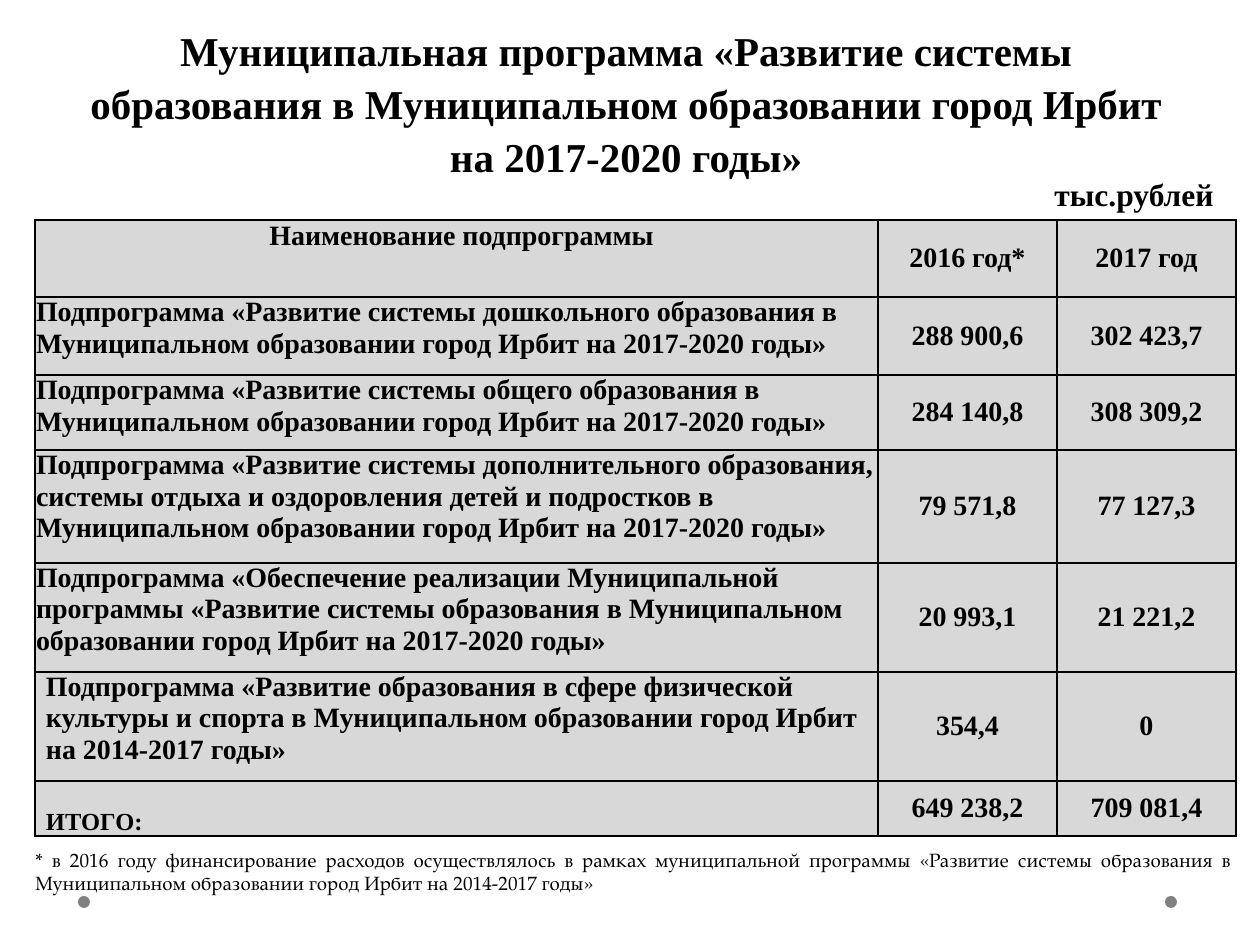
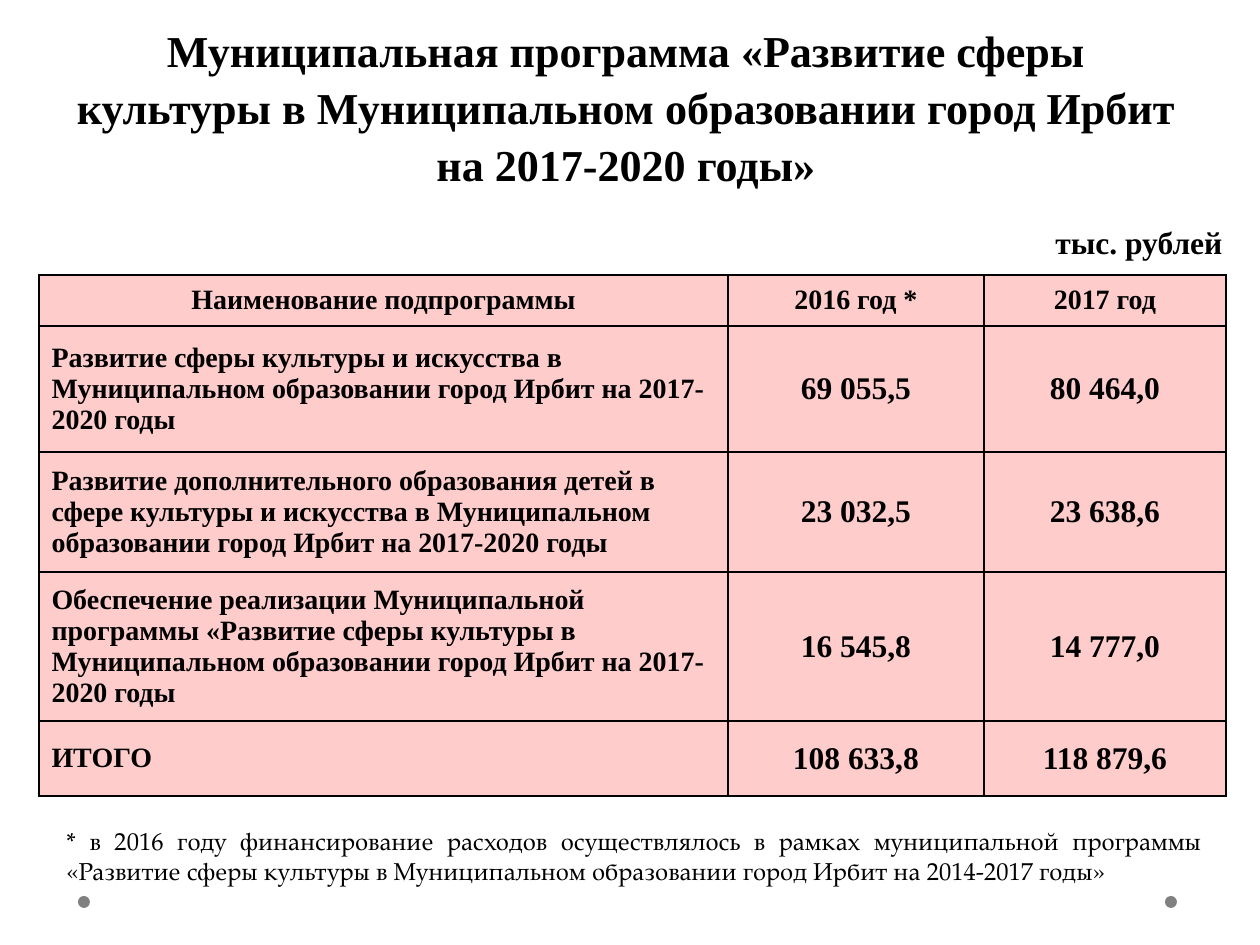
from lxml.etree import SubElement
from pptx import Presentation
from pptx.dml.color import RGBColor
from pptx.enum.shapes import MSO_SHAPE
from pptx.enum.text import MSO_ANCHOR, MSO_AUTO_SIZE, PP_ALIGN
from pptx.oxml.ns import qn
from pptx.util import Emu, Pt

EMU_PER_PX = 914400 / 126
SERIF = "Times New Roman"
NOTE_FONT = "TeX Gyre Pagella"
COLORS = {"text": "000000", "border": "000000", "dot": "808080",
          "education": "B2B2B2", "culture": "FFCCCC"}
TITLE_ONLY_LAYOUT = 5

EDUCATION_ROWS = [
    ("Наименование подпрограммы", "2016 год*", "2017 год"),
    ("Подпрограмма «Развитие системы дошкольного образования в Муниципальном "
     "образовании город Ирбит на 2017-2020 годы»", "288 900,6", "302 423,7"),
    ("Подпрограмма «Развитие системы общего образования в Муниципальном "
     "образовании город Ирбит на 2017-2020 годы»", "284 140,8", "308 309,2"),
    ("Подпрограмма «Развитие системы дополнительного образования, системы отдыха "
     "и оздоровления детей и подростков в Муниципальном образовании город Ирбит "
     "на 2017-2020 годы»", "79 571,8", "77 127,3"),
    ("Подпрограмма «Обеспечение реализации Муниципальной программы «Развитие "
     "системы образования в Муниципальном образовании город Ирбит "
     "на 2017-2020 годы»", "20 993,1", "21 221,2"),
    ("Подпрограмма «Развитие образования в сфере физической культуры и спорта "
     "в Муниципальном образовании город Ирбит на 2014-2017 годы»", "354,4", "0"),
    ("ИТОГО:", "649 238,2", "709 081,4"),
]
CULTURE_ROWS = [
    ("Наименование подпрограммы", "2016 год *", "2017 год"),
    ("Развитие сферы культуры и искусства в Муниципальном образовании город Ирбит "
     "на 2017-2020 годы", "69 055,5", "80 464,0"),
    ("Развитие дополнительного образования детей в сфере культуры и искусства "
     "в Муниципальном образовании город Ирбит на 2017-2020 годы",
     "23 032,5", "23 638,6"),
    ("Обеспечение реализации Муниципальной программы «Развитие сферы культуры "
     "в Муниципальном образовании город Ирбит на 2017-2020 годы",
     "16 545,8", "14 777,0"),
    ("ИТОГО", "108 633,8", "118 879,6"),
]


def px(length):
    return Emu(round(length * EMU_PER_PX))


def color(name):
    return RGBColor.from_string(COLORS[name])


def write(text_frame, text, size, align, font=SERIF, bold=True):
    text_frame.text = text
    paragraph = text_frame.paragraphs[0]
    paragraph.alignment = align
    for run in paragraph.runs:
        run.font.name = font
        run.font.size = Pt(size)
        run.font.bold = bold
        run.font.color.rgb = color("text")
    return paragraph


def add_dots(slide):
    for left in (78, 1165):
        dot = slide.shapes.add_shape(MSO_SHAPE.OVAL, px(left), px(896), px(12), px(12))
        dot.shadow.inherit = False
        dot.fill.solid()
        dot.fill.fore_color.rgb = color("dot")
        dot.line.fill.background()


def add_program_slide(presentation, title_text, title_top, title_size):
    layout = presentation.slide_layouts[TITLE_ONLY_LAYOUT]
    slide = presentation.slides.add_slide(layout)
    add_dots(slide)
    title = slide.shapes.title
    title.left, title.top, title.width, title.height = map(px, (59, title_top, 1134, 158))
    text_frame = title.text_frame
    text_frame.auto_size = MSO_AUTO_SIZE.NONE
    text_frame.vertical_anchor = MSO_ANCHOR.BOTTOM
    paragraph = write(text_frame, title_text, title_size, PP_ALIGN.CENTER)
    paragraph.line_spacing = 1.08
    return slide


def add_text(slide, box, text, size, align, font=SERIF, bold=True):
    text_box = slide.shapes.add_textbox(*map(px, box))
    text_box.text_frame.word_wrap = True
    write(text_box.text_frame, text, size, align, font, bold)


def add_note(slide, box, text, size):
    add_text(slide, box, text, size, PP_ALIGN.JUSTIFY, NOTE_FONT, False)


def style_cell(cell, fill_name, opacity):
    """Draw thin borders on all sides, then the fill."""
    properties = cell._tc.get_or_add_tcPr()
    for side in ("a:lnL", "a:lnR", "a:lnT", "a:lnB"):
        line = SubElement(properties, qn(side), w=str(Pt(1)))
        fill = SubElement(line, qn("a:solidFill"))
        SubElement(fill, qn("a:srgbClr"), val=COLORS["border"])
    cell.fill.solid()
    cell.fill.fore_color.rgb = color(fill_name)
    if opacity < 100:
        fill_color = properties.find(qn("a:solidFill"))[0]
        SubElement(fill_color, qn("a:alpha"), val=str(opacity * 1000))


def add_budget_table(slide, left, top, widths, heights, rows, fill_name,
                     value_size, opacity=100):
    frame = slide.shapes.add_table(len(rows), len(widths), px(left), px(top),
                                   px(sum(widths)), px(sum(heights)))
    table = frame.table
    table.first_row = table.horz_banding = False
    for column, width in zip(table.columns, widths):
        column.width = px(width)
    for row_index, (height, texts) in enumerate(zip(heights, rows)):
        table.rows[row_index].height = px(height)
        for column_index, text in enumerate(texts):
            cell = table.cell(row_index, column_index)
            is_header, is_name = row_index == 0, column_index == 0
            style_cell(cell, fill_name, opacity)
            cell.vertical_anchor = MSO_ANCHOR.MIDDLE
            write(cell.text_frame, text,
                  16 if is_header or is_name else value_size,
                  PP_ALIGN.LEFT if is_name and not is_header else PP_ALIGN.CENTER)
    return table


def tighten_cells(table, indented_rows):
    """Remove cell margins and move the names to the top of their rows."""
    for row_index, row in enumerate(table.rows):
        for cell in row.cells:
            cell.margin_left = cell.margin_right = px(1)
            cell.margin_top = cell.margin_bottom = px(0)
        name_cell = row.cells[0]
        name_cell.vertical_anchor = MSO_ANCHOR.TOP
        if row_index in indented_rows:
            name_cell.margin_left = px(11)


def build_education_slide(presentation):
    slide = add_program_slide(
        presentation, "Муниципальная программа «Развитие системы образования в "
        "Муниципальном образовании город Ирбит на 2017-2020 годы»", 29, 23.4)
    table = add_budget_table(slide, 35, 220, (843, 179, 179),
                             (77, 78, 75, 113, 109, 109, 55),
                             EDUCATION_ROWS, "education", 16, opacity=50)
    last = len(EDUCATION_ROWS) - 1
    tighten_cells(table, (0, last - 1, last))
    total_cell = table.cell(last, 0)
    total_cell.vertical_anchor = MSO_ANCHOR.BOTTOM
    total_cell.text_frame.paragraphs[0].runs[0].font.size = Pt(14)
    add_text(slide, (1037, 169, 189, 50), "тыс.рублей", 18, PP_ALIGN.RIGHT)
    add_note(slide, (23, 842, 1221, 59),
             "* в 2016 году финансирование расходов осуществлялось в рамках "
             "муниципальной программы «Развитие системы образования в "
             "Муниципальном образовании город Ирбит на 2014-2017 годы»", 11)


def build_culture_slide(presentation):
    slide = add_program_slide(
        presentation, "Муниципальная программа «Развитие сферы культуры в "
        "Муниципальном образовании город Ирбит на 2017-2020 годы»", 39, 25.2)
    add_budget_table(slide, 39, 275, (689, 256, 242), (51, 126, 120, 149, 75),
                     CULTURE_ROWS, "culture", 18)
    add_text(slide, (1043, 217, 194, 50), "тыс. рублей", 18, PP_ALIGN.LEFT)
    add_note(slide, (54, 820, 1160, 72),
             "* в 2016 году финансирование расходов осуществлялось в рамках "
             "муниципальной программы «Развитие сферы культуры в "
             "Муниципальном образовании город Ирбит на 2014-2017 годы»", 14)


def main():
    presentation = Presentation()
    presentation.slide_width, presentation.slide_height = px(1260), px(945)
    build_education_slide(presentation)
    build_culture_slide(presentation)
    presentation.save("out.pptx")


if __name__ == "__main__":
    main()
